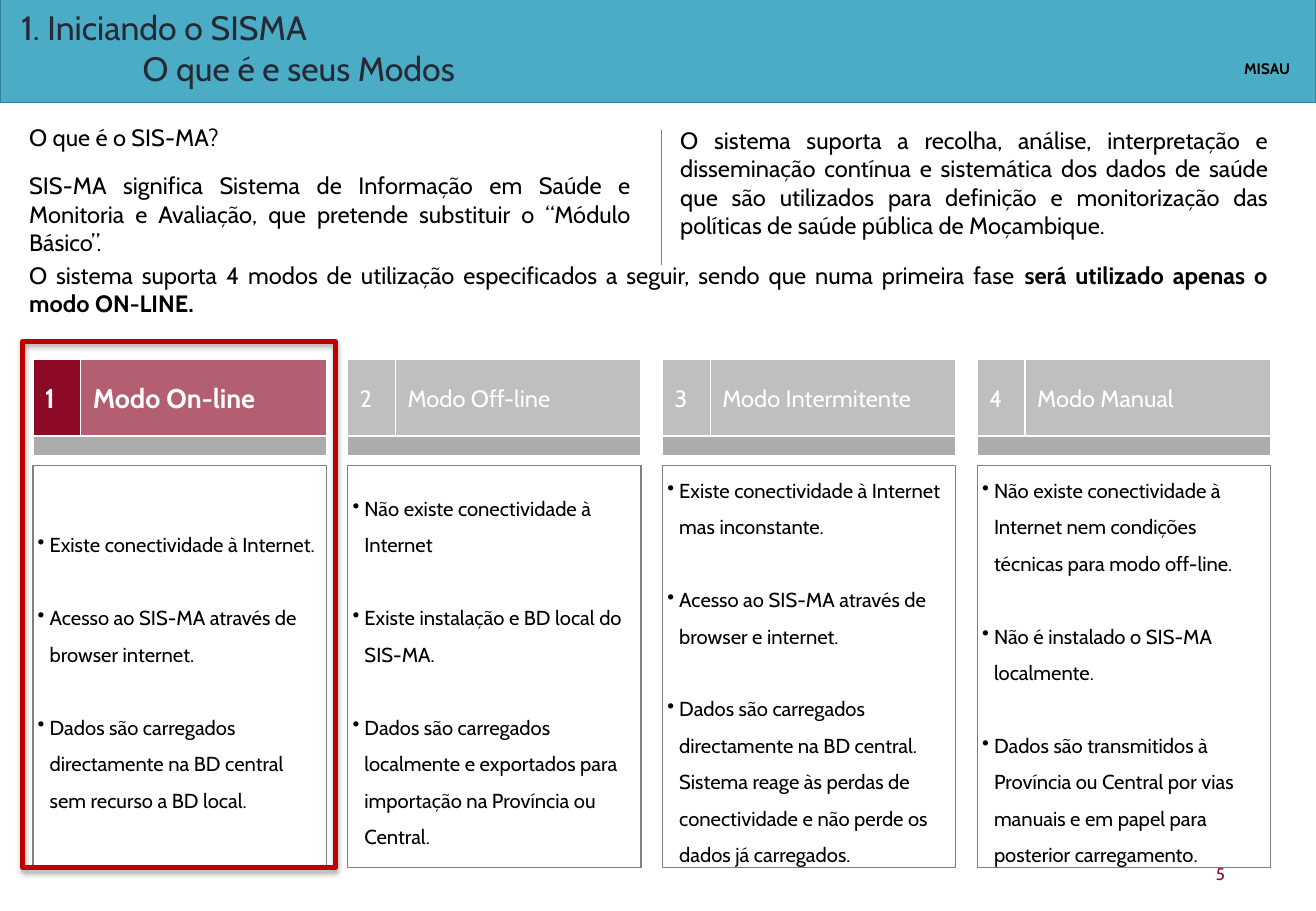
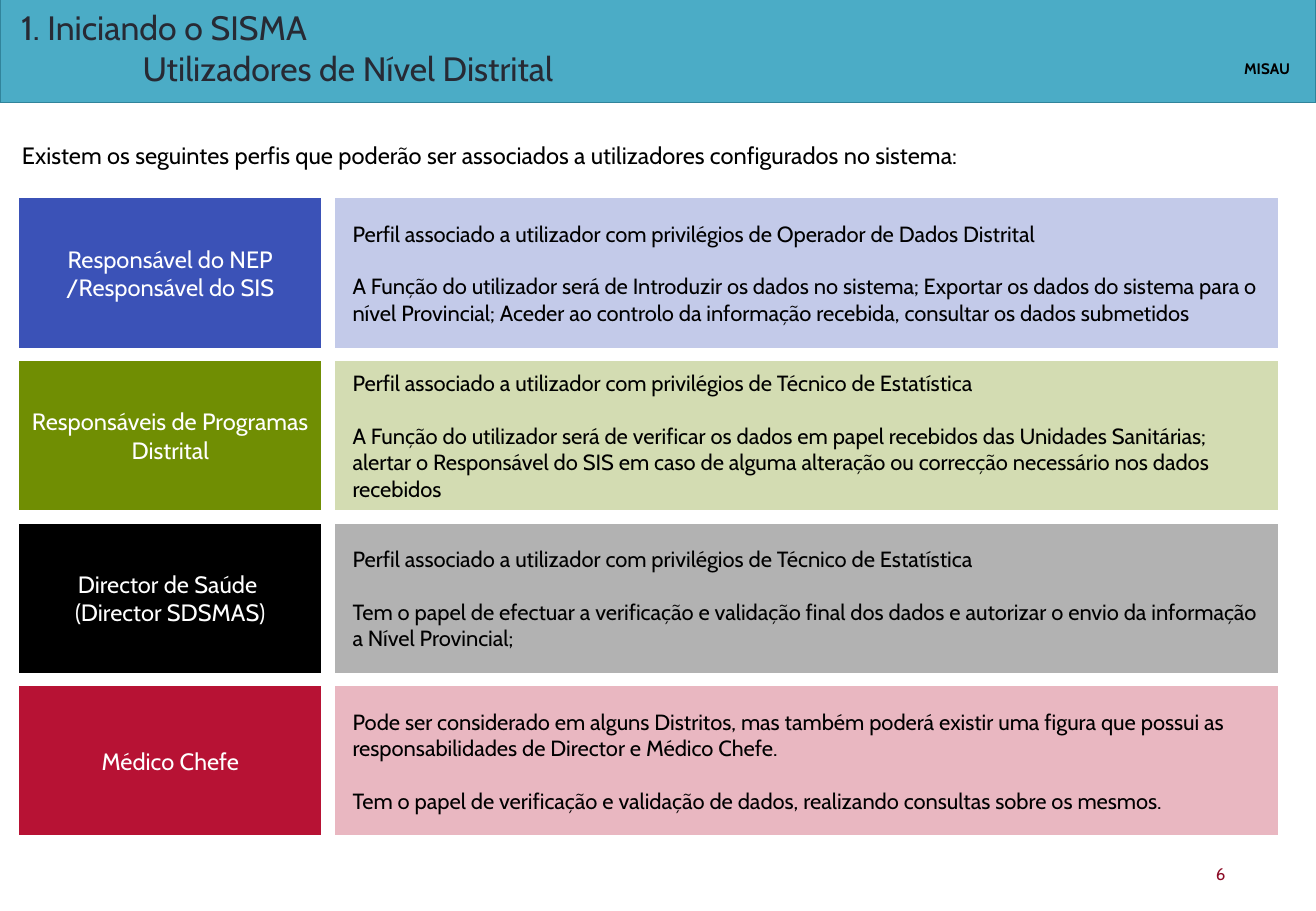
import pptx
import pptx.util
import pptx.dml.color
import pptx.enum.shapes
import pptx.enum.text
import pptx.oxml
import pptx.oxml.ns
import lxml.etree

Cm, Pt = pptx.util.Cm, pptx.util.Pt
RGBColor = pptx.dml.color.RGBColor
Align = pptx.enum.text.PP_ALIGN
Anchor = pptx.enum.text.MSO_ANCHOR
qn = pptx.oxml.ns.qn

# Colours and font
FONT = "Cabin"
BLACK, WHITE = RGBColor(0, 0, 0), RGBColor(255, 255, 255)
BAND, BAND_EDGE = RGBColor(0x4B, 0xAC, 0xC6), RGBColor(0x31, 0x84, 0x9B)
TITLE_INK = RGBColor(0x27, 0x2A, 0x34)
PAGE_INK = RGBColor(0x8C, 0x0B, 0x26)
WINE, SILVER = RGBColor(0x8C, 0x0A, 0x25), RGBColor(0xBF, 0xBF, 0xBF)
GREY, RED = RGBColor(0x80, 0x80, 0x80), RGBColor(0xC0, 0, 0)
BLUE, GREEN = RGBColor(0x3B, 0x52, 0xB7), RGBColor(0x70, 0x8E, 0x03)
CRIMSON = RGBColor(0xB7, 0x12, 0x34)

# Frame and paragraph formats
MIDDLE = {"vertical_anchor": Anchor.MIDDLE}
TITLE_FRAME = {"margin_left": Cm(0.08), "margin_right": Cm(0.08),
               "margin_top": Cm(0.08), "margin_bottom": Cm(0.08), **MIDDLE}
LIST_FRAME = {"margin_left": Cm(0.1), "margin_right": Cm(0.2),
              "margin_top": Cm(0.1), "margin_bottom": Cm(0.1), **MIDDLE}
LEAD_FRAME = {"margin_left": Cm(0.1), "margin_right": Cm(0.1),
              "margin_top": Cm(0.1), "margin_bottom": Cm(0.1)}
PROFILE_FRAME = {"margin_left": Cm(0.4), **MIDDLE}
LEFT = {"alignment": Align.LEFT}
CENTRED = {"alignment": Align.CENTER}
JUSTIFIED = {"alignment": Align.JUSTIFY, "space_after": Pt(12)}
LEAD = {"line_spacing": 1.2, **JUSTIFIED}
LISTED = {"line_spacing": 1.5, **LEFT}


def add_panel(slide, place, fill, edge, edge_width, opacity=100):
    """Rectangle at place (left, top, width, height in cm)."""
    panel = slide.shapes.add_shape(
        pptx.enum.shapes.MSO_SHAPE.RECTANGLE, *map(Cm, place))
    panel.shadow.inherit = False
    if fill is None:
        panel.fill.background()
    else:
        panel.fill.solid()
        panel.fill.fore_color.rgb = fill
        if opacity < 100:
            colour = panel.fill._xPr.find(".//" + qn("a:srgbClr"))
            lxml.etree.SubElement(colour, qn("a:alpha"), val=str(opacity * 1000))
    panel.line.color.rgb = edge
    panel.line.width = Pt(edge_width)
    return panel


def write(shape, texts, size, ink, bold=False, layout=LEFT, frame={}, gap=0):
    """Fill a shape with paragraphs; **...** marks bold words."""
    text_frame = shape.text_frame
    for name, value in {"word_wrap": True, **frame}.items():
        setattr(text_frame, name, value)
    for i, text in enumerate(texts):
        paragraph = text_frame.add_paragraph() if i else text_frame.paragraphs[0]
        for name, value in layout.items():
            setattr(paragraph, name, value)
        if i and gap:
            paragraph.space_before = Pt(gap)
        for j, words in enumerate(text.split("**")):
            if words:
                run = paragraph.add_run()
                run.text = words
                run.font.color.rgb = ink
                look = {"name": FONT, "size": Pt(size), "bold": bold or j % 2 == 1}
                for name, value in look.items():
                    setattr(run.font, name, value)
    return text_frame


prs = pptx.Presentation()
prs.slide_width, prs.slide_height = Cm(27.51), Cm(19.05)

# Shared band, title, owner and page number
slides = []
for page, subtitle in ((5, "O que é e seus Modos"),
                       (6, "Utilizadores de Nível Distrital")):
    slide = prs.slides.add_slide(prs.slide_layouts[6])
    slides.append(slide)
    add_panel(slide, (0, -0.1, 27.51, 2.24), BAND, BAND_EDGE, 0.75)
    title = slide.shapes.add_textbox(Cm(0.36), Cm(0), Cm(22.8), Cm(1.98))
    heading = write(title, ["1. Iniciando o SISMA", subtitle], 20, TITLE_INK,
                    frame=TITLE_FRAME)
    heading.paragraphs[1]._p.get_or_add_pPr().set("marL", str(Cm(2.54)))
    owner = slide.shapes.add_textbox(Cm(25.76), Cm(1.12), Cm(1.55), Cm(0.64))
    write(owner, ["MISAU"], 9, BLACK, bold=True, frame={"word_wrap": False})
    number = slide.shapes.add_textbox(Cm(25.17), Cm(17.93), Cm(1.6), Cm(0.69))
    write(number, [str(page)], 10, PAGE_INK)
modes_slide, profiles_slide = slides

# Slide 1: introduction
introduction = (
    ((0.36, 2.44, 13.08, 3.07),
     ["O que é o SIS-MA?",
      "SIS-MA significa Sistema de Informação em Saúde e Monitoria e Avaliação, "
      "que pretende substituir o “Módulo Básico”."]),
    ((13.97, 2.51, 12.8, 2.64),
     ["O sistema suporta a recolha, análise, interpretação e disseminação "
      "contínua e sistemática dos dados de saúde que são utilizados para "
      "definição e monitorização das políticas de saúde pública de Moçambique."]),
    ((0.36, 5.33, 26.39, 1.45),
     ["O sistema suporta 4 modos de utilização especificados a seguir, sendo que "
      "numa primeira fase **será utilizado apenas o modo ON-LINE.**"]),
)
for place, texts in introduction:
    write(modes_slide.shapes.add_textbox(*map(Cm, place)), texts, 14, BLACK,
          layout=JUSTIFIED)
divider = modes_slide.shapes.add_connector(
    pptx.enum.shapes.MSO_CONNECTOR.STRAIGHT, Cm(13.82), Cm(2.72), Cm(13.82), Cm(5.54))
divider.line.color.rgb = GREY
divider.line.width = Pt(0.25)
lxml.etree.SubElement(divider._element.spPr, qn("a:effectLst"))

# Slide 1: the four modes
modes = (
    ("Modo On-line",
     ["Existe conectividade à Internet.",
      "Acesso ao SIS-MA através de browser internet.",
      "Dados são carregados directamente na BD central sem recurso a BD local."]),
    ("Modo Off-line",
     ["Não existe conectividade à Internet",
      "Existe instalação e BD local do SIS-MA.",
      "Dados são carregados localmente e exportados para importação na Província "
      "ou Central."]),
    ("Modo Intermitente",
     ["Existe conectividade à Internet mas inconstante.",
      "Acesso ao SIS-MA através de browser e internet.",
      "Dados são carregados directamente na BD central. Sistema reage às perdas "
      "de conectividade e não perde os dados já carregados."]),
    ("Modo Manual",
     ["Não existe conectividade à Internet nem condições técnicas para modo "
      "off-line.",
      "Não é instalado o SIS-MA localmente.",
      "Dados são transmitidos à Província ou Central por vias manuais e em papel "
      "para posterior carregamento."]),
)
for i, (mode, traits) in enumerate(modes):
    left = 0.69 + 6.58 * i
    active = i == 0
    fill, size = (WINE, 16) if active else (SILVER, 14)
    for text, x, width, opacity in (
            (str(i + 1), left, 1, 100),
            (mode, left + 1, 5.13, 65 if active else 100)):
        head = add_panel(modes_slide, (x, 7.52, width, 1.6), fill, WHITE, 0.75, opacity)
        write(head, [text], size, WHITE, bold=active, frame=MIDDLE)
    add_panel(modes_slide, (left, 9.12, 6.13, 0.41), GREY, WHITE, 0.75, 65)
    details = add_panel(modes_slide, (left, 9.73, 6.13, 8.41), None, GREY, 0.75)
    listing = write(details, traits, 12, BLACK, layout=LISTED, frame=LIST_FRAME, gap=21.6)
    for paragraph in listing.paragraphs:
        properties = paragraph._p.get_or_add_pPr()
        properties.set("marL", str(Cm(0.25)))
        properties.set("indent", str(Cm(-0.25)))
        lxml.etree.SubElement(properties, qn("a:buChar"), char="•")

# Slide 1: highlight of the mode in use
highlight = add_panel(modes_slide, (0.48, 7.14, 6.53, 11), None, RED, 3)
shadow = lxml.etree.SubElement(
    highlight._element.spPr.find(qn("a:effectLst")), qn("a:outerShdw"),
    blurRad=str(Pt(3.1)), dist=str(Pt(1.8)), dir="5400000", rotWithShape="0")
shade = lxml.etree.SubElement(shadow, qn("a:srgbClr"), val=str(BLACK))
lxml.etree.SubElement(shade, qn("a:alpha"), val="35000")

# Slide 2: lead sentence
lead = profiles_slide.shapes.add_textbox(Cm(0.36), Cm(2.72), Cm(26.39), Cm(1.2))
write(lead, ["Existem os seguintes perfis que poderão ser associados a utilizadores "
             "configurados no sistema:"], 14, BLACK, layout=LEAD, frame=LEAD_FRAME)

# Slide 2: user profiles
profiles = (
    (BLUE, ["Responsável do NEP /Responsável do SIS"],
     ["Perfil associado a utilizador com privilégios de Operador de Dados Distrital",
      "A Função do utilizador será de Introduzir os dados no sistema; Exportar os "
      "dados do sistema para o nível Provincial; Aceder ao controlo da informação "
      "recebida, consultar os dados submetidos"]),
    (GREEN, ["Responsáveis de Programas Distrital"],
     ["Perfil associado a utilizador com privilégios de Técnico de Estatística",
      "A Função do utilizador será de verificar os dados em papel recebidos das "
      "Unidades Sanitárias; alertar o Responsável do SIS em caso de alguma "
      "alteração ou correcção necessário nos dados recebidos"]),
    (BLACK, ["Director de Saúde ", "(Director SDSMAS)"],
     ["Perfil associado a utilizador com privilégios de Técnico de Estatística",
      "Tem o papel de efectuar a verificação e validação final dos dados e "
      "autorizar o envio da informação a Nível Provincial;"]),
    (CRIMSON, ["Médico Chefe"],
     ["Pode ser considerado em alguns Distritos, mas também poderá existir uma "
      "figura que possui as responsabilidades de Director e Médico Chefe.",
      "Tem o papel de verificação e validação de dados, realizando consultas sobre "
      "os mesmos."]),
)
for i, (colour, role, duties) in enumerate(profiles):
    top = 4.11 + 3.4 * i
    role_panel = add_panel(profiles_slide, (0.36, top, 6.4, 3.2), colour, WHITE, 2.25)
    write(role_panel, role, 14, WHITE, layout=CENTRED, frame=MIDDLE)
    duty_panel = add_panel(profiles_slide, (6.97, top, 19.79, 3.2), colour, WHITE, 2.25, 30)
    write(duty_panel, duties, 13, BLACK, frame=PROFILE_FRAME, gap=15.6)

prs.save("out.pptx")
